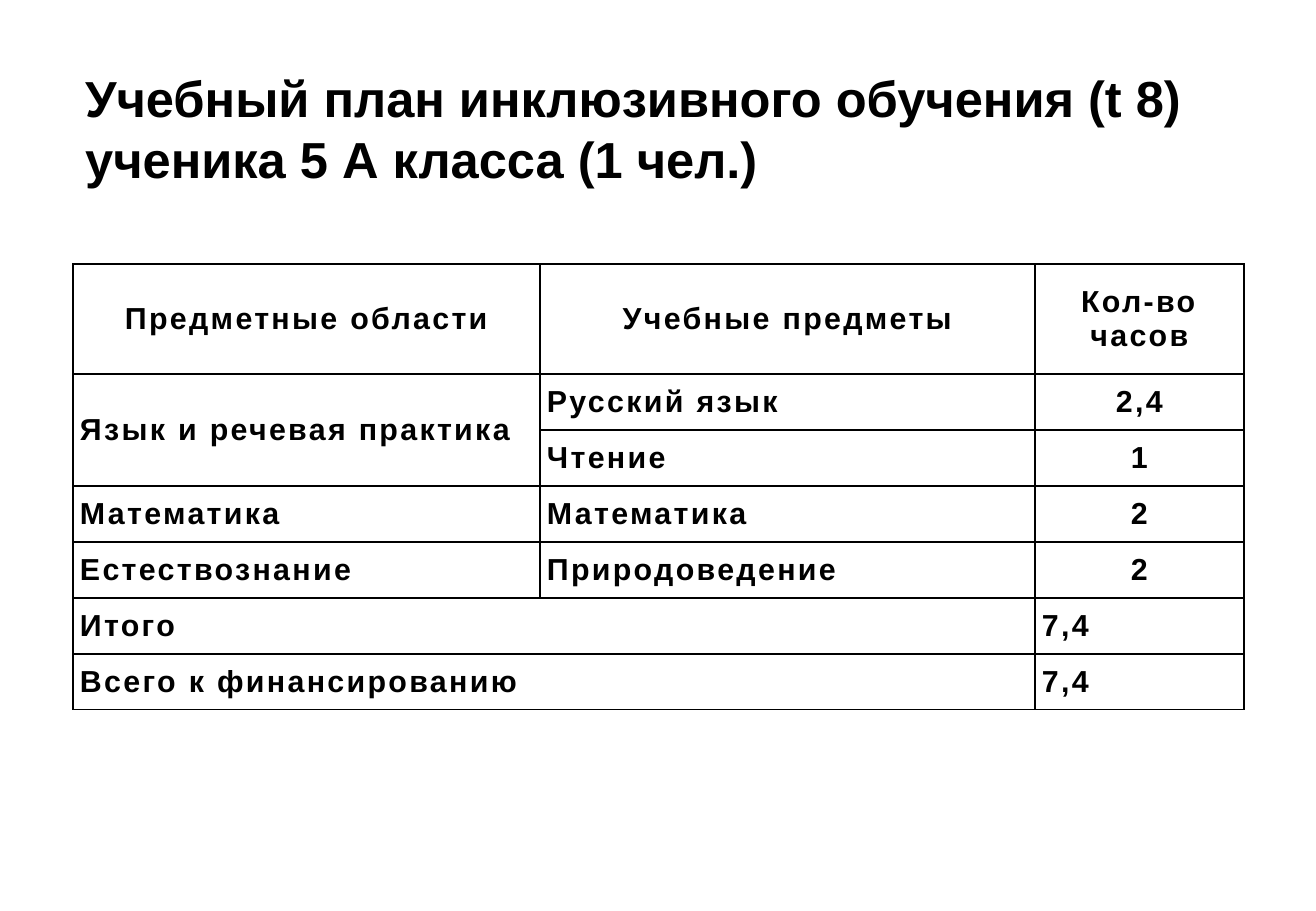
from lxml.etree import SubElement
from pptx import Presentation
from pptx.dml.color import RGBColor
from pptx.enum.text import MSO_ANCHOR as Anchor, MSO_AUTO_SIZE as AutoSize, PP_ALIGN as Align
from pptx.oxml.ns import qn
from pptx.util import Pt

PX = 7526  # EMU per pixel
BLACK = RGBColor(0, 0, 0)
FONT = "Arial"

COLUMNS = [467, 495, 209]
HEADER_HEIGHT, ROW_HEIGHT = 110, 56
ROWS = [
    ["Предметные области", "Учебные предметы", "Кол-во часов"],
    ["Язык и речевая практика", "Русский язык", "2,4"],
    ["", "Чтение", "1"],
    ["Математика", "Математика", "2"],
    ["Естествознание", "Природоведение", "2"],
    ["Итого", "", "7,4"],
    ["Всего к финансированию", "", "7,4"],
]
FIRST_TOTAL = 5


def style(para, size, align):
    para.alignment = align
    para.font.name = FONT
    para.font.size = Pt(size)
    para.font.bold = True
    para.font.color.rgb = BLACK


def add_borders(cell):
    props = cell._tc.get_or_add_tcPr()
    for position, side in enumerate(("lnL", "lnR", "lnT", "lnB")):
        line = SubElement(props, qn(f"a:{side}"), w=str(Pt(1)))
        fill = SubElement(line, qn("a:solidFill"))
        SubElement(fill, qn("a:srgbClr"), val=str(BLACK))
        props.insert(position, line)


deck = Presentation()
deck.slide_width, deck.slide_height = 1316 * PX, 911 * PX
page = deck.slides.add_slide(deck.slide_layouts[5])

# Title
title = page.shapes.title
title.left, title.top, title.width, title.height = 73 * PX, 57 * PX, 1153 * PX, 141 * PX
frame = title.text_frame
frame.text = "Учебный план инклюзивного обучения (t 8)\vученика 5 А класса (1 чел.)"
frame.word_wrap = True
frame.auto_size = AutoSize.NONE
frame.vertical_anchor = Anchor.MIDDLE
style(frame.paragraphs[0], 30, Align.LEFT)

# Table grid
table_height = HEADER_HEIGHT + ROW_HEIGHT * (len(ROWS) - 1)
table = page.shapes.add_table(len(ROWS), len(COLUMNS), 73 * PX, 264 * PX,
                              sum(COLUMNS) * PX, table_height * PX).table
table.first_row = table.horz_banding = False
for column, width in zip(table.columns, COLUMNS):
    column.width = width * PX
for index, row in enumerate(table.rows):
    row.height = (ROW_HEIGHT if index else HEADER_HEIGHT) * PX

# Cells
for r, texts in enumerate(ROWS):
    for c, text in enumerate(texts):
        cell = table.cell(r, c)
        cell.text = text
        cell.fill.background()
        cell.vertical_anchor = Anchor.MIDDLE
        cell.margin_left = cell.margin_right = 7 * PX
        cell.margin_top = cell.margin_bottom = 0
        add_borders(cell)
        centred = r == 0 or (c == 2 and r < FIRST_TOTAL)
        para = cell.text_frame.paragraphs[0]
        style(para, 18, Align.CENTER if centred else Align.LEFT)
        para._p.pPr.find(qn("a:defRPr")).set("spc", "140")

# Merged cells
table.cell(1, 0).merge(table.cell(2, 0))
for r in range(FIRST_TOTAL, len(ROWS)):
    table.cell(r, 0).merge(table.cell(r, 1))

deck.save("out.pptx")
